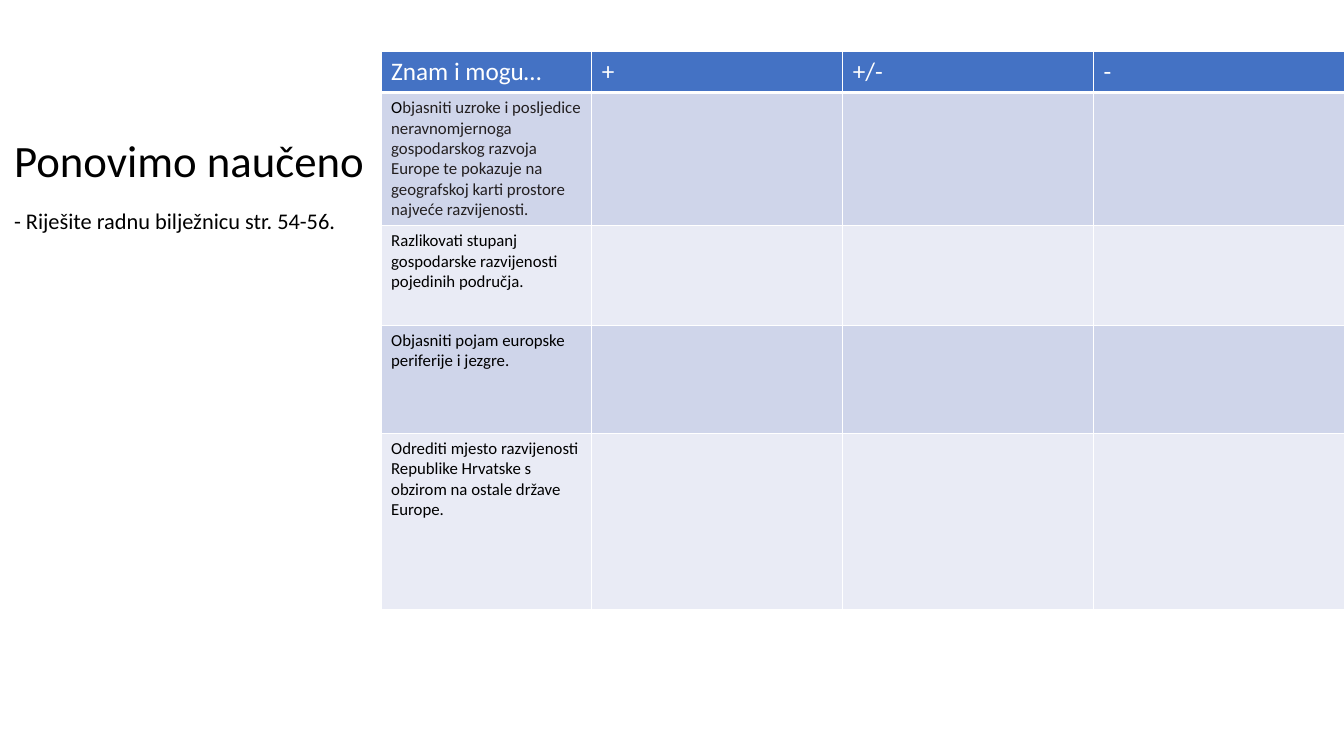
from lxml.etree import SubElement
from pptx import Presentation
from pptx.dml.color import RGBColor
from pptx.enum.text import MSO_ANCHOR, MSO_AUTO_SIZE, PP_ALIGN
from pptx.oxml.ns import qn
from pptx.util import Pt

FONT = "Calibri"
COLORS = {
    "text": "000000",
    "soft_text": "231F20",
    "white": "FFFFFF",
    "header": "4472C4",
    "dark_band": "CFD5EA",
    "light_band": "E9EBF5",
}
HEADERS = ["Znam i mogu…", "+", "+/-", "-"]
GOALS = [
    [("O", "text"),
     ("bjasniti uzroke i posljedice neravnomjernoga gospodarskog razvoja Europe "
      "te pokazuje na geografskoj karti prostore najveće razvijenosti.", "soft_text")],
    [("Razlikovati stupanj gospodarske razvijenosti pojedinih područja.", "text")],
    [("Objasniti pojam europske periferije i jezgre.", "text")],
    [("Odrediti mjesto razvijenosti Republike Hrvatske s obzirom na ostale države Europe.",
      "text")],
]
COLUMN_WIDTHS = [150.5, 179.25, 179.25, 179.25]
ROW_HEIGHTS = [26.6, 88.6, 71.3, 77, 126]


def color(name):
    return RGBColor.from_string(COLORS[name])


def add_run(paragraph, text, size, color_name):
    run = paragraph.add_run()
    run.text = text
    run.font.name = FONT
    run.font.size = Pt(size)
    run.font.bold = False
    run.font.color.rgb = color(color_name)


def fill_placeholder(placeholder, text, size, top, height):
    placeholder.left, placeholder.top = Pt(10), Pt(top)
    placeholder.width, placeholder.height = Pt(309.6), Pt(height)
    frame = placeholder.text_frame
    frame.word_wrap = True
    frame.auto_size = MSO_AUTO_SIZE.NONE
    frame.vertical_anchor = MSO_ANCHOR.TOP
    frame.margin_left = frame.margin_right = frame.margin_top = frame.margin_bottom = Pt(0)
    paragraph = frame.paragraphs[0]
    paragraph.alignment = PP_ALIGN.LEFT
    paragraph.line_spacing = 0.9
    paragraph.space_before = Pt(0)
    properties = paragraph._p.get_or_add_pPr()
    properties.set("marL", "0")
    properties.set("indent", "0")
    SubElement(properties, qn("a:buNone"))
    add_run(paragraph, text, size, color_name="text")


def format_cell(cell, fill_name, bottom_width=1):
    properties = cell._tc.get_or_add_tcPr()
    for side, width in (("L", 1), ("R", 1), ("T", 1), ("B", bottom_width)):
        line = SubElement(properties, qn(f"a:ln{side}"), w=str(Pt(width)))
        line_fill = SubElement(line, qn("a:solidFill"))
        SubElement(line_fill, qn("a:srgbClr"), val=COLORS["white"])
    cell.fill.solid()
    cell.fill.fore_color.rgb = color(fill_name)


def add_goal_table(slide):
    table = slide.shapes.add_table(
        len(ROW_HEIGHTS), len(COLUMN_WIDTHS), Pt(272.2), Pt(36.9),
        Pt(sum(COLUMN_WIDTHS)), Pt(sum(ROW_HEIGHTS))).table
    for column, width in zip(table.columns, COLUMN_WIDTHS):
        column.width = Pt(width)
    for row, height in zip(table.rows, ROW_HEIGHTS):
        row.height = Pt(height)

    for cell, header in zip(table.rows[0].cells, HEADERS):
        format_cell(cell, "header", bottom_width=3)
        add_run(cell.text_frame.paragraphs[0], header, 18, "white")
    for index, goal in enumerate(GOALS, start=1):
        for cell in table.rows[index].cells:
            format_cell(cell, "dark_band" if index % 2 else "light_band")
        paragraph = table.cell(index, 0).text_frame.paragraphs[0]
        for text, color_name in goal:
            add_run(paragraph, text, 12, color_name)


def main():
    presentation = Presentation()
    presentation.slide_width, presentation.slide_height = Pt(960), Pt(540)
    slide = presentation.slides.add_slide(presentation.slide_layouts[1])
    fill_placeholder(slide.shapes.title, "Ponovimo naučeno", 32, top=99.4, height=134.6)
    fill_placeholder(slide.placeholders[1], "- Riješite radnu bilježnicu str. 54-56.", 16,
                     top=149.8, height=161.3)
    add_goal_table(slide)
    presentation.save("out.pptx")


if __name__ == "__main__":
    main()
